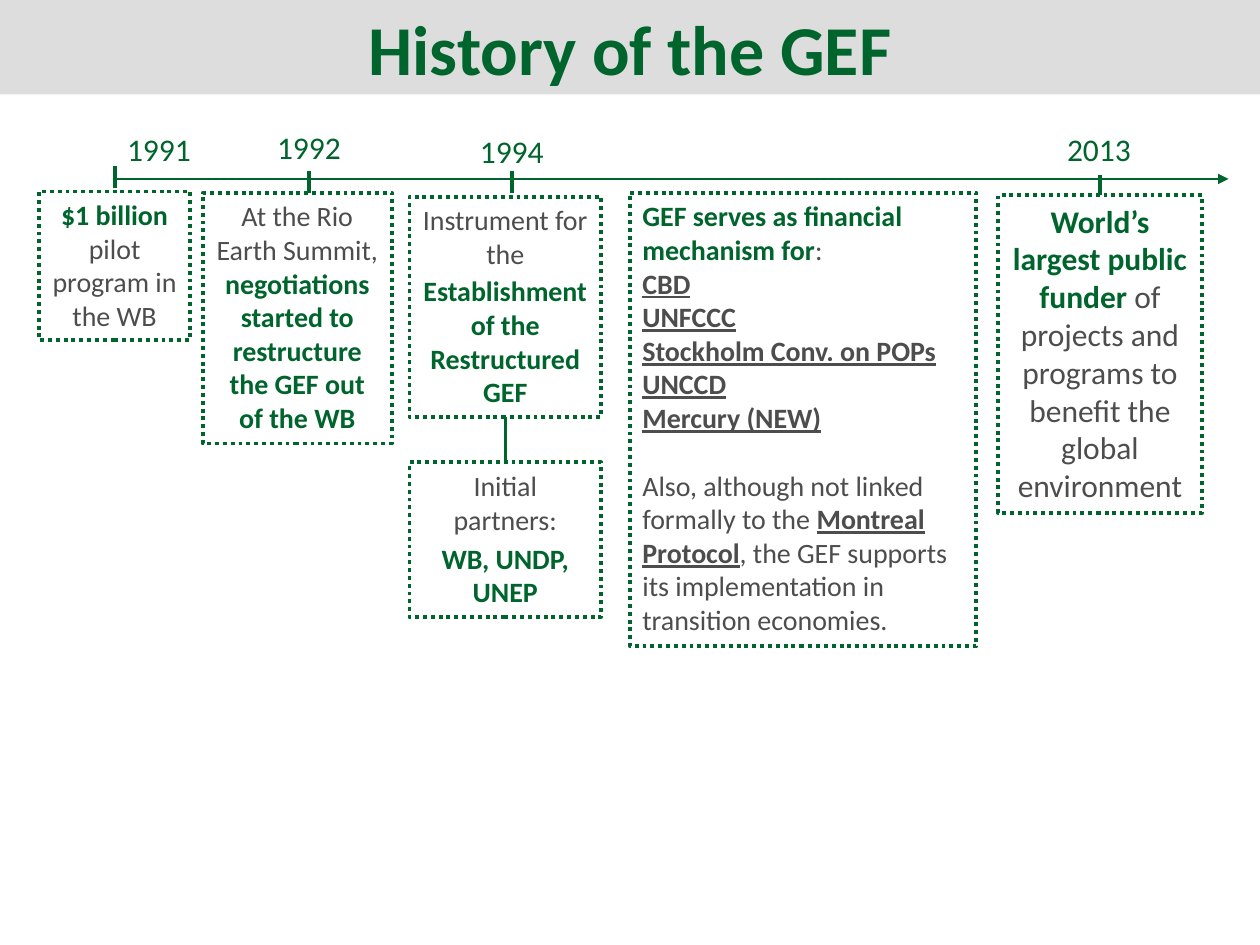
from lxml import etree
from pptx import Presentation
from pptx.dml.color import RGBColor
from pptx.enum.dml import MSO_LINE
from pptx.enum.shapes import MSO_CONNECTOR, MSO_SHAPE
from pptx.enum.text import MSO_ANCHOR, MSO_AUTO_SIZE, PP_ALIGN
from pptx.oxml.ns import qn
from pptx.util import Inches, Pt

GREEN = RGBColor(0x00, 0x64, 0x2D)
GRAY = RGBColor(0x4D, 0x4D, 0x4D)
LIGHT_GRAY = RGBColor(0xDD, 0xDD, 0xDD)
FONT = "Calibri"
STRAIGHT = MSO_CONNECTOR.STRAIGHT
RECTANGLE = MSO_SHAPE.RECTANGLE
DOTTED = MSO_LINE.ROUND_DOT
LEFT, CENTER = PP_ALIGN.LEFT, PP_ALIGN.CENTER
TOP, MIDDLE = MSO_ANCHOR.TOP, MSO_ANCHOR.MIDDLE
NO_FIT, GROW = MSO_AUTO_SIZE.NONE, MSO_AUTO_SIZE.SHAPE_TO_FIT_TEXT

# Run styles: colour, bold, underline
PLAIN = (GRAY, False, False)
STRONG = (GREEN, True, False)
LINKED = (GRAY, True, True)


def add_line(x1, y1, x2, y2, width):
    line = slide.shapes.add_connector(
        STRAIGHT, Inches(x1), Inches(y1), Inches(x2), Inches(y2))
    line.line.color.rgb = GREEN
    line.line.width = Pt(width)
    etree.SubElement(line._element.spPr, qn("a:effectLst"))
    return line


def add_box(x, y, w, h, paragraphs, size=16, align=CENTER, gap=0):
    """Add a dotted box; gap is the space before its last paragraph."""
    sp = slide.shapes.add_shape(
        RECTANGLE, Inches(x), Inches(y), Inches(w), Inches(h))
    sp.shadow.inherit = False
    sp.fill.background()
    sp.line.color.rgb = GREEN
    sp.line.width = Pt(2.25)
    sp.line.dash_style = DOTTED
    tf = sp.text_frame
    tf.word_wrap = True
    tf.auto_size = GROW
    tf.vertical_anchor = TOP
    for i, runs in enumerate(paragraphs):
        p = tf.add_paragraph() if i else tf.paragraphs[0]
        p.alignment = align
        p.font.name = FONT
        p.font.size = Pt(size)
        for text, (color, bold, underline) in runs:
            r = p.add_run()
            r.text = text
            r.font.color.rgb = color
            r.font.bold = bold
            r.font.underline = underline
    if gap:
        p.space_before = Pt(gap)
    return sp


prs = Presentation()
prs.slide_width, prs.slide_height = Inches(10), Inches(7.5)
slide = prs.slides.add_slide(prs.slide_layouts[5])

# Title band
title = slide.shapes.title
title.left, title.top = Inches(0), Inches(0)
title.width, title.height = Inches(10), Inches(0.75)
title.fill.solid()
title.fill.fore_color.rgb = LIGHT_GRAY
tf = title.text_frame
tf.text = "History of the GEF"
tf.auto_size = NO_FIT
tf.vertical_anchor = MIDDLE
p = tf.paragraphs[0]
p.alignment = CENTER
p.font.name = FONT
p.font.size = Pt(40)
p.font.bold = True
p.font.color.rgb = GREEN

# Time axis
axis = add_line(0.91, 1.42, 9.75, 1.42, 1.5)
etree.SubElement(axis.line._get_or_add_ln(), qn("a:tailEnd"), type="triangle")

# Year labels
for year, x, y in (("1991", 0.91, 0.98), ("1992", 2.1, 0.97),
                   ("1994", 3.71, 1), ("2013", 8.37, 0.98)):
    sp = slide.shapes.add_textbox(
        Inches(x), Inches(y), Inches(0.71), Inches(0.4))
    tf = sp.text_frame
    tf.word_wrap = False
    tf.auto_size = GROW
    p = tf.paragraphs[0]
    p.text = year
    p.font.name = FONT
    p.font.size = Pt(18)
    p.font.color.rgb = GREEN

# Event boxes
add_box(0.31, 1.52, 1.2, 1.18, [
    [("$1 billion", STRONG)],
    [("pilot program in the WB", PLAIN)],
])
add_box(1.61, 1.53, 1.5, 1.99, [[
    ("At the Rio Earth Summit, ", PLAIN),
    ("negotiations started to restructure the GEF out of the WB", STRONG),
]])
instrument = add_box(3.25, 1.56, 1.52, 1.75, [[
    ("Instrument for the ", PLAIN),
    ("Establishment", STRONG),
    (" ", STRONG),
    ("of the Restructured GEF", STRONG),
]])
instrument.text_frame.paragraphs[0].runs[2].font.size = Pt(18)
partners = add_box(3.25, 3.67, 1.52, 1.23, [
    [("Initial partners:", PLAIN)],
    [("WB, UNDP, UNEP", STRONG)],
], gap=3.2)

conventions = ("CBD", "UNFCCC", "Stockholm Conv. on POPs", "UNCCD",
               "Mercury (NEW)")
add_box(5, 1.53, 2.75, 3.6, [
    [("GEF serves as financial mechanism for", STRONG), (":", PLAIN)],
    *[[(name, LINKED)] for name in conventions],
    [("Also, although not linked formally to the ", PLAIN),
     ("Montreal Protocol", LINKED),
     (", the GEF supports its implementation in transition economies.",
      PLAIN)],
], align=LEFT, gap=19.5)

funder = add_box(7.92, 1.55, 1.62, 2.52, [[
    ("World’s largest public funder", STRONG),
    (" of projects and programs to benefit the global environment", PLAIN),
]], size=18)

# Year ticks
for x, y in ((0.91, 1.32), (2.45, 1.36), (4.06, 1.36)):
    add_line(x, y, x, y + 0.17, 2.25)
add_line(8.73, 1.39, 8.73, 1.55, 2.25).end_connect(funder, 0)

# Link from the instrument to its partners
link = add_line(4.01, 3.31, 4.01, 3.67, 1.5)
link.begin_connect(instrument, 2)
link.end_connect(partners, 0)

prs.save("out.pptx")
